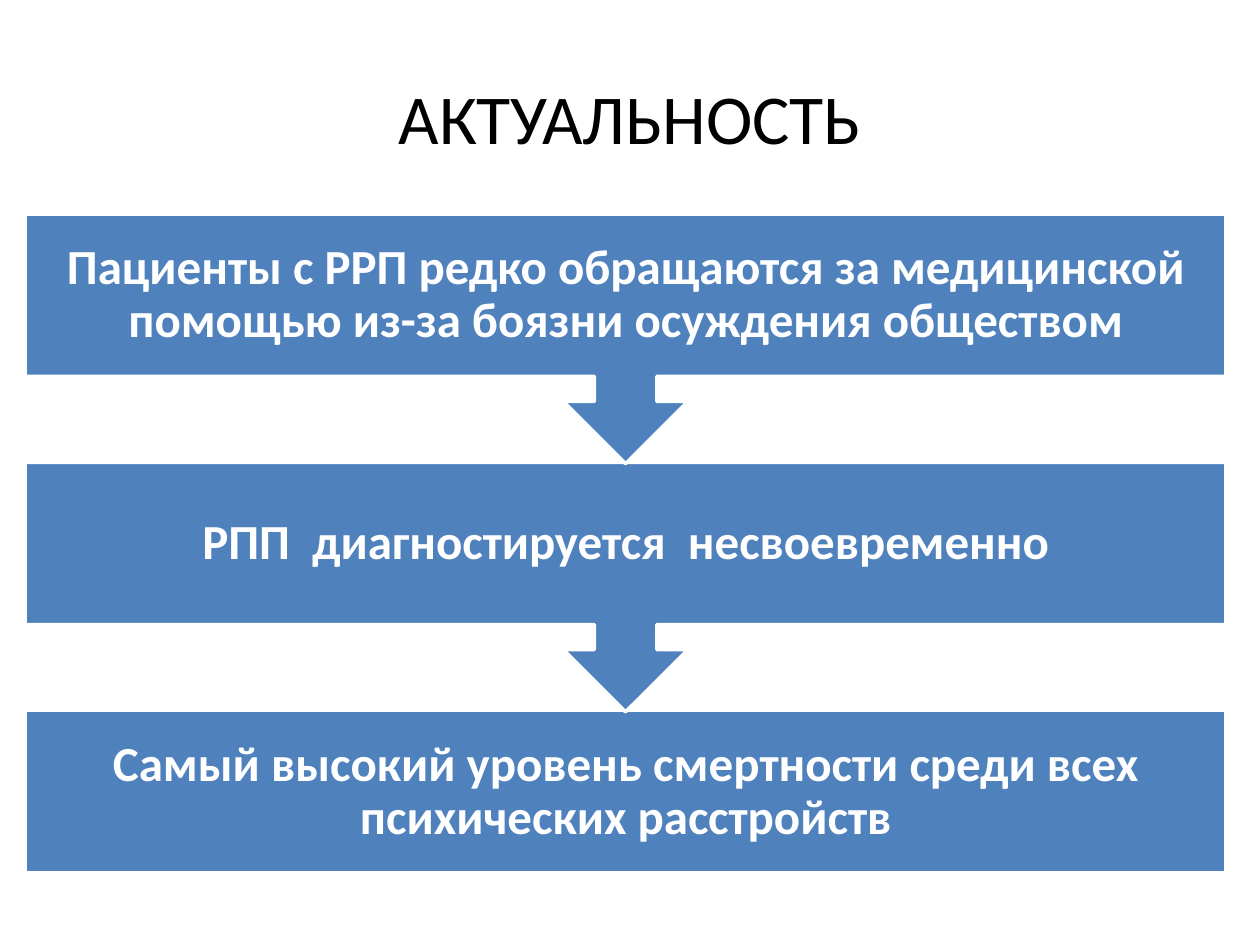
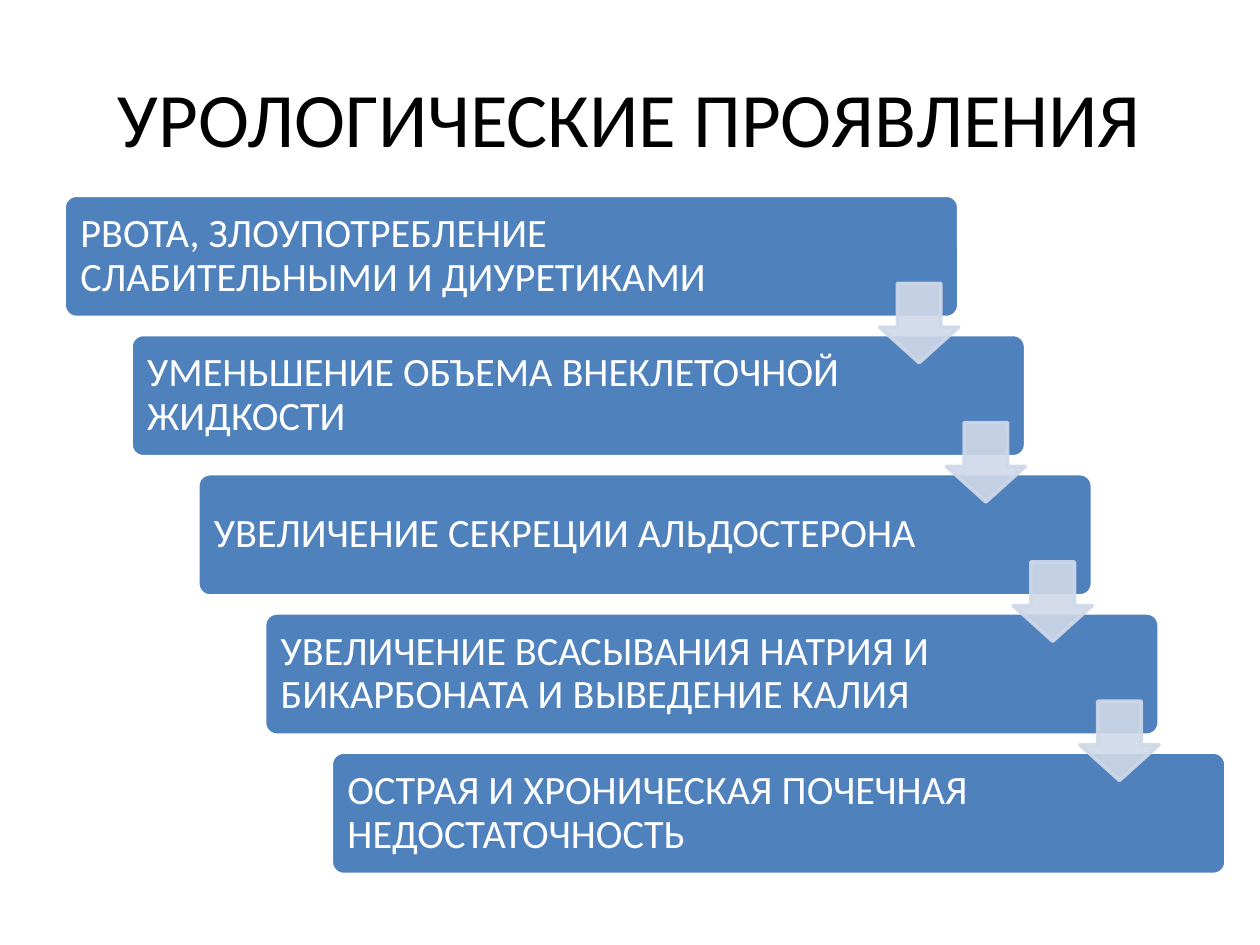
from dataclasses import dataclass

from pptx import Presentation
from pptx.dml.color import RGBColor
from pptx.enum import shapes as sh, text as tx
from pptx.oxml import ns, xmlchemy as xc
from pptx.util import Inches, Pt

HUES = {"blue": "4F81BD", "pale": "D0D8E8", "white": "FFFFFF", "black": "000000"}
FONT = "Calibri"
KIND = sh.MSO_SHAPE


@dataclass(frozen=True)
class Box:
    left: float
    top: float
    width: float
    height: float

    def shift(self, dx: float, dy: float) -> "Box":
        return Box(self.left + dx, self.top + dy, self.width, self.height)

    def lengths(self) -> list:
        return [Inches(v) for v in (self.left, self.top, self.width, self.height)]


@dataclass(frozen=True)
class Style:
    size: float
    hue: str = "white"
    bold: bool = False
    align: tx.PP_ALIGN = tx.PP_ALIGN.CENTER
    inset: float = 0.1
    line: float = 0.9


HEAD = Box(0.5, 0.3, 9, 1.25)
STEP = Style(28, bold=True, inset=0.22)
STAIR = Style(23, align=tx.PP_ALIGN.LEFT)

STEPS = [
    "Пациенты с РРП редко обращаются за медицинской помощью из-за боязни осуждения обществом",
    "РПП  диагностируется  несвоевременно",
    "Самый высокий уровень смертности среди всех психических расстройств",
]
STAIRS = [
    "РВОТА, ЗЛОУПОТРЕБЛЕНИЕ СЛАБИТЕЛЬНЫМИ И ДИУРЕТИКАМИ",
    "УМЕНЬШЕНИЕ ОБЪЕМА ВНЕКЛЕТОЧНОЙ ЖИДКОСТИ",
    "УВЕЛИЧЕНИЕ СЕКРЕЦИИ АЛЬДОСТЕРОНА",
    "УВЕЛИЧЕНИЕ ВСАСЫВАНИЯ НАТРИЯ И БИКАРБОНАТА И ВЫВЕДЕНИЕ КАЛИЯ",
    "ОСТРАЯ И ХРОНИЧЕСКАЯ ПОЧЕЧНАЯ НЕДОСТАТОЧНОСТЬ",
]


def color(name: str) -> RGBColor:
    return RGBColor.from_string(HUES[name])


def write(slide, box: Box, words: str, style: Style) -> None:
    """Add a wrapped, vertically centred text box."""
    frame = slide.shapes.add_textbox(*box.lengths()).text_frame
    frame.word_wrap = True
    frame.vertical_anchor = tx.MSO_ANCHOR.MIDDLE
    frame.margin_left = frame.margin_right = Inches(style.inset)
    frame.margin_top = frame.margin_bottom = Inches(style.inset)
    par = frame.paragraphs[0]
    par.text = words
    par.alignment = style.align
    par.line_spacing = style.line
    par.font.name = FONT
    par.font.size = Pt(style.size)
    par.font.bold = style.bold
    par.font.color.rgb = color(style.hue)


def draw(slide, kind: KIND, box: Box, fill: str = "blue", edge: str = "white",
         adjust: tuple = (), turn: float = 0):
    """Add a filled shape with a 2 pt outline."""
    shape = slide.shapes.add_shape(kind, *box.lengths())
    shape.shadow.inherit = False
    shape.rotation = turn
    for i, value in enumerate(adjust):
        shape.adjustments[i] = value
    shape.fill.solid()
    shape.fill.fore_color.rgb = color(fill)
    shape.line.color.rgb = color(edge)
    shape.line.width = Pt(2)
    return shape


def fade(shape, share: int) -> None:
    """Set the opacity, in percent, of fill and outline."""
    for node in shape.element.spPr.iter(ns.qn("a:srgbClr")):
        alpha = xc.OxmlElement("a:alpha")
        alpha.set("val", str(share * 1000))
        node.append(alpha)


def start(deck, title: str, size: float):
    """Add a blank slide with its title."""
    slide = deck.slides.add_slide(deck.slide_layouts[6])
    write(slide, HEAD, title, Style(size, "black", line=1))
    return slide


def flow(deck) -> None:
    slide = start(deck, "АКТУАЛЬНОСТЬ", 40)
    base = Box(0.2, 1.7, 9.53, 1.29)
    tall = Box(0.2, 1.7, 9.53, 1.98)
    last = len(STEPS) - 1
    # Bottom step first, so that each arrow lies over the step below
    for i in range(last, -1, -1):
        drop = 1.97 * i
        if i == last:
            draw(slide, KIND.RECTANGLE, base.shift(0, drop))
        else:
            draw(slide, KIND.UP_ARROW_CALLOUT, tall.shift(0, drop), turn=180)
        write(slide, base.shift(0, drop), STEPS[i], STEP)


def stairs(deck) -> None:
    slide = start(deck, "УРОЛОГИЧЕСКИЕ ПРОЯВЛЕНИЯ", 44)
    bar = Box(0.51, 1.55, 7.1, 0.97)
    label = Box(0.54, 1.58, 5.9, 0.91)
    arrow = Box(6.98, 2.25, 0.63, 0.63)
    dx, dy = 0.53, 4.42 / (len(STAIRS) - 1)
    # Steps
    for i, words in enumerate(STAIRS):
        draw(slide, KIND.ROUNDED_RECTANGLE, bar.shift(dx * i, dy * i), adjust=(0.1,))
        write(slide, label.shift(dx * i, dy * i), words, STAIR)
    # Arrows between steps
    for i in range(len(STAIRS) - 1):
        mark = draw(slide, KIND.DOWN_ARROW, arrow.shift(dx * i, dy * i),
                    "pale", "pale", (0.55, 0.45))
        fade(mark, 90)


def main() -> None:
    deck = Presentation()
    deck.slide_width, deck.slide_height = Inches(10), Inches(7.5)
    flow(deck)
    stairs(deck)
    deck.save("out.pptx")


if __name__ == "__main__":
    main()
